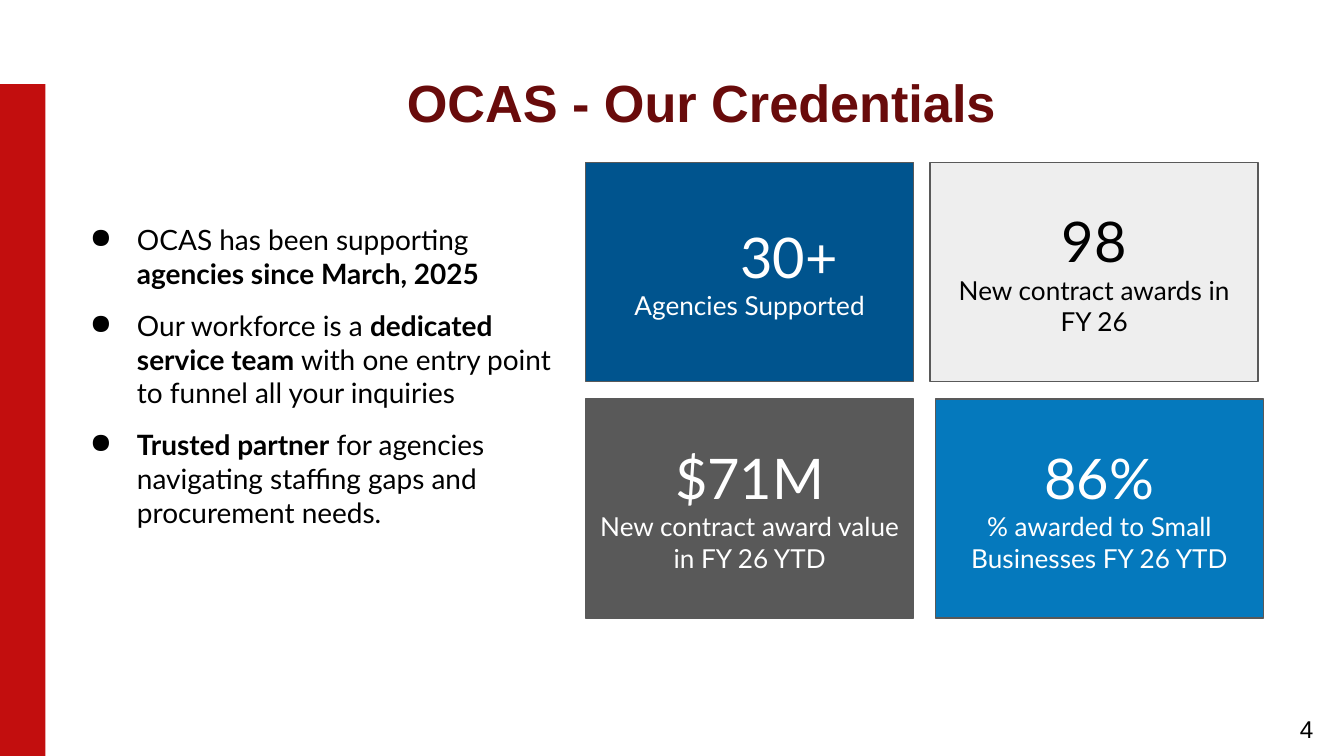
"""Build the OCAS credentials slide: bullets on the left, four key figures on the right."""
from dataclasses import dataclass

from lxml import etree
from pptx import Presentation
from pptx import util as u
from pptx.dml import color
from pptx.enum import shapes, text
from pptx.oxml import ns


@dataclass(frozen=True)
class Theme:
    heading_font: str = "Arial"
    body_font: str = "Lato"
    red: str = "C20E0E"
    maroon: str = "690B0B"
    navy: str = "00548E"
    blue: str = "0579BD"
    gray: str = "595959"
    pale: str = "EEEEEE"
    black: str = "000000"
    white: str = "FFFFFF"
    title: int = 28
    figure: int = 30
    bullet: int = 15
    caption: int = 14
    number: int = 13


theme = Theme()


def style(run, font, size, ink, bold=False):
    run.font.name = font
    run.font.size = u.Pt(size)
    run.font.bold = bold
    run.font.color.rgb = color.RGBColor.from_string(ink)


def prepare(frame):
    frame.word_wrap = True
    frame.margin_left = frame.margin_right = u.Cm(0.25)
    frame.margin_top = frame.margin_bottom = u.Cm(0.25)
    return frame


deck = Presentation()
deck.slide_width, deck.slide_height = u.Cm(25.4), u.Cm(14.29)
slide = deck.slides.add_slide(deck.slide_layouts[6])

side_bar = slide.shapes.add_shape(
    shapes.MSO_SHAPE.RECTANGLE, u.Cm(0), u.Cm(1.59), u.Cm(0.86), u.Cm(12.7))
side_bar.shadow.inherit = False
side_bar.fill.solid()
side_bar.fill.fore_color.rgb = color.RGBColor.from_string(theme.red)
side_bar.line.fill.background()

page_number = prepare(slide.shapes.add_textbox(
    u.Cm(23.55), u.Cm(13.26), u.Cm(1.52), u.Cm(1.09)).text_frame)
page_number.text = "4"
page_number.paragraphs[0].alignment = text.PP_ALIGN.RIGHT
style(page_number.paragraphs[0].runs[0], theme.heading_font, theme.number, theme.black)

title = prepare(slide.shapes.add_textbox(
    u.Cm(1.98), u.Cm(1.07), u.Cm(21.44), u.Cm(1.6)).text_frame)
title.text = "OCAS - Our Credentials"
title.paragraphs[0]._p.get_or_add_pPr().set("marL", str(u.Cm(5.46)))
style(title.paragraphs[0].runs[0], theme.heading_font, theme.title, theme.maroon, True)

credentials = [
    [("OCAS has been supporting ", False), ("agencies since March, 2025", True)],
    [("Our workforce is a ", False), ("dedicated service team", True),
     (" with one entry point to funnel all your inquiries", False)],
    [("Trusted partner", True),
     (" for agencies navigating staffing gaps and procurement needs.", False)],
]
credential_list = prepare(slide.shapes.add_textbox(
    u.Cm(1.07), u.Cm(3.96), u.Cm(9.75), u.Cm(6.35)).text_frame)
for index, phrases in enumerate(credentials):
    credential = credential_list.add_paragraph() if index else credential_list.paragraphs[0]
    if index:
        credential.space_before = u.Pt(10)
    properties = credential._p.get_or_add_pPr()
    properties.set("marL", str(u.Cm(1.27)))
    properties.set("indent", str(u.Cm(-0.89)))
    bullet_color = etree.SubElement(properties, ns.qn("a:buClr"))
    etree.SubElement(bullet_color, ns.qn("a:srgbClr"), val=theme.black)
    etree.SubElement(properties, ns.qn("a:buChar"), char="●")
    for words, bold in phrases:
        phrase = credential.add_run()
        phrase.text = words
        style(phrase, theme.body_font, theme.bullet, theme.black, bold)

top_row, bottom_row = 3.07, 7.54
metrics = [
    (11.07, top_row, theme.navy, theme.white, "30+", "Agencies Supported"),
    (11.07, bottom_row, theme.gray, theme.white, "$71M",
     "New contract award value in FY 26 YTD"),
    (17.58, top_row, theme.pale, theme.black, "98", "New contract awards in FY 26"),
    (17.68, bottom_row, theme.blue, theme.white, "86%",
     "% awarded to Small Businesses FY 26 YTD"),
]
for left, top, fill, ink, figure, caption in metrics:
    card = slide.shapes.add_shape(
        shapes.MSO_SHAPE.RECTANGLE, u.Cm(left), u.Cm(top), u.Cm(6.2), u.Cm(4.14))
    card.shadow.inherit = False
    card.fill.solid()
    card.fill.fore_color.rgb = color.RGBColor.from_string(fill)
    card.line.color.rgb = color.RGBColor.from_string(theme.gray)
    card.line.width = u.Pt(0.75)
    card_text = prepare(card.text_frame)
    card_text.vertical_anchor = text.MSO_ANCHOR.MIDDLE
    card_text.text = f"{figure}\n{caption}"
    for line, size in zip(card_text.paragraphs, (theme.figure, theme.caption)):
        line.alignment = text.PP_ALIGN.CENTER
        style(line.runs[0], theme.body_font, size, ink)
    if figure == "30+":
        card_text.paragraphs[0].alignment = text.PP_ALIGN.LEFT
        card_text.paragraphs[0]._p.get_or_add_pPr().set("marL", str(u.Cm(2.67)))

deck.save("out.pptx")
